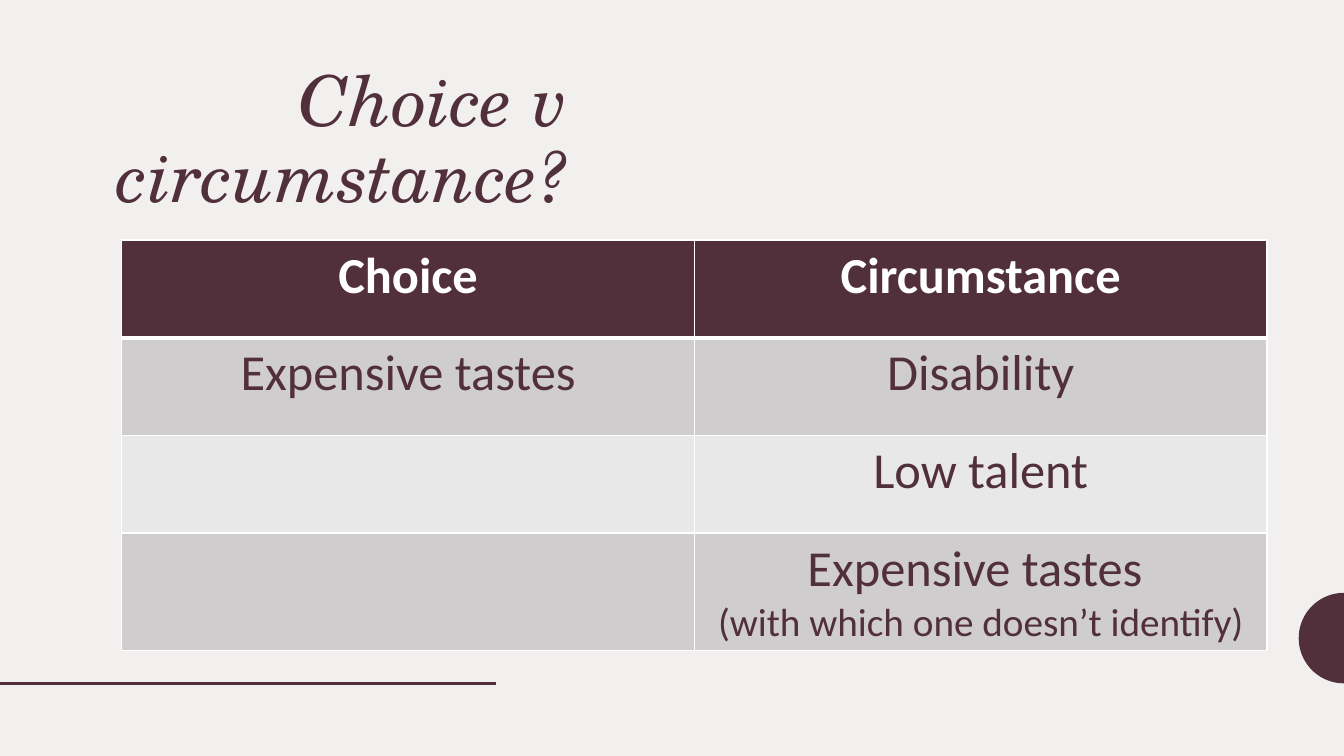
import math

import pptx
import pptx.dml.color
import pptx.enum.shapes
import pptx.enum.text
import pptx.oxml.ns
import pptx.util
from lxml import etree

Cm = pptx.util.Cm
Pt = pptx.util.Pt
qn = pptx.oxml.ns.qn
ALIGN = pptx.enum.text.PP_ALIGN


def color(code):
    return pptx.dml.color.RGBColor.from_string(code)


class Deck:
    plum, white, paper = "51303B", "FFFFFF", "F2F0EF"
    bands = ("D0CDCE", "E9E8E8")
    serif, sans = "TeX Gyre Schola", "Calibri"

    def __init__(self, slide):
        self.slide = slide
        fill = slide.background.fill
        fill.solid()
        fill.fore_color.rgb = color(self.paper)

    def style(self, para, size, face, ink, align):
        para.alignment = align
        font = para.font
        font.size, font.name = Pt(size), face
        font.color.rgb = color(ink)
        return font

    def title(self, text, x, y, w, h):
        box = self.slide.shapes.add_textbox(Cm(x), Cm(y), Cm(w), Cm(h))
        box.text_frame.word_wrap = True
        para = box.text_frame.paragraphs[0]
        para.text = text
        para.line_spacing = 0.9
        self.style(para, 50, self.serif, self.plum, ALIGN.RIGHT).italic = True

    def rule(self, x1, x2, y):
        line = self.slide.shapes.add_connector(
            pptx.enum.shapes.MSO_CONNECTOR.STRAIGHT, Cm(x1), Cm(y), Cm(x2), Cm(y))
        line.line.color.rgb = color(self.plum)
        line.line.width = Pt(2)
        props = line._element.find(qn("p:spPr"))
        etree.SubElement(props, qn("a:effectLst"))

    def half(self, x, y, r, steps=48):
        """Left half of a disc centred on (x, y)."""
        turns = [math.pi * (0.5 + i / steps) for i in range(steps + 1)]
        dots = [(Cm(x + r * math.cos(t)), Cm(y + r * math.sin(t))) for t in turns]
        form = self.slide.shapes.build_freeform(*dots[0])
        form.add_line_segments(dots[1:], close=True)
        shape = form.convert_to_shape()
        shape.shadow.inherit = False
        shape.fill.solid()
        shape.fill.fore_color.rgb = color(self.plum)
        shape.line.fill.background()

    def edges(self, cell, base):
        props = cell._tc.get_or_add_tcPr()
        for spot, side in enumerate("LRTB"):
            width = base if side == "B" else 1
            edge = etree.Element(qn("a:ln" + side), w=str(Pt(width)))
            fill = etree.SubElement(edge, qn("a:solidFill"))
            etree.SubElement(fill, qn("a:srgbClr"), val=self.white)
            props.insert(spot, edge)

    def table(self, rows, x, y, wide, high):
        cols = len(rows[0])
        grid = self.slide.shapes.add_table(
            len(rows), cols, Cm(x), Cm(y), Cm(wide * cols), Cm(high * len(rows))).table
        for col in grid.columns:
            col.width = Cm(wide)
        for i, row in enumerate(rows):
            grid.rows[i].height = Cm(high)
            head = i == 0
            for j, lines in enumerate(row):
                cell = grid.cell(i, j)
                cell.fill.solid()
                back = self.plum if head else self.bands[(i - 1) % 2]
                cell.fill.fore_color.rgb = color(back)
                # The header and the first body row share a thick edge
                self.edges(cell, 3 if head else 1)
                if i == 1:
                    cell._tc.tcPr.find(qn("a:lnT")).set("w", str(Pt(3)))
                cell.text = "\n".join(lines)
                for k, para in enumerate(cell.text_frame.paragraphs):
                    font = self.style(para, 28 if k else 36, self.sans,
                                      self.white if head else self.plum, ALIGN.CENTER)
                    font.bold = head


def main():
    show = pptx.Presentation()
    show.slide_width, show.slide_height = Cm(33.87), Cm(19.05)
    deck = Deck(show.slides.add_slide(show.slide_layouts[6]))

    # Decoration
    deck.half(33.87, 16.08, 1.14)
    deck.rule(0, 12.5, 17.22)

    # Title
    deck.title("Choice v circumstance?", 2.11, 1.55, 12.47, 13.77)

    # Comparison
    deck.table([
        [["Choice"], ["Circumstance"]],
        [["Expensive tastes"], ["Disability"]],
        [[], ["Low talent"]],
        [[], ["Expensive tastes ", "(with which one doesn’t identify)"]],
    ], 3.07, 6.05, 14.43, 2.46)

    show.save("out.pptx")


if __name__ == "__main__":
    main()
